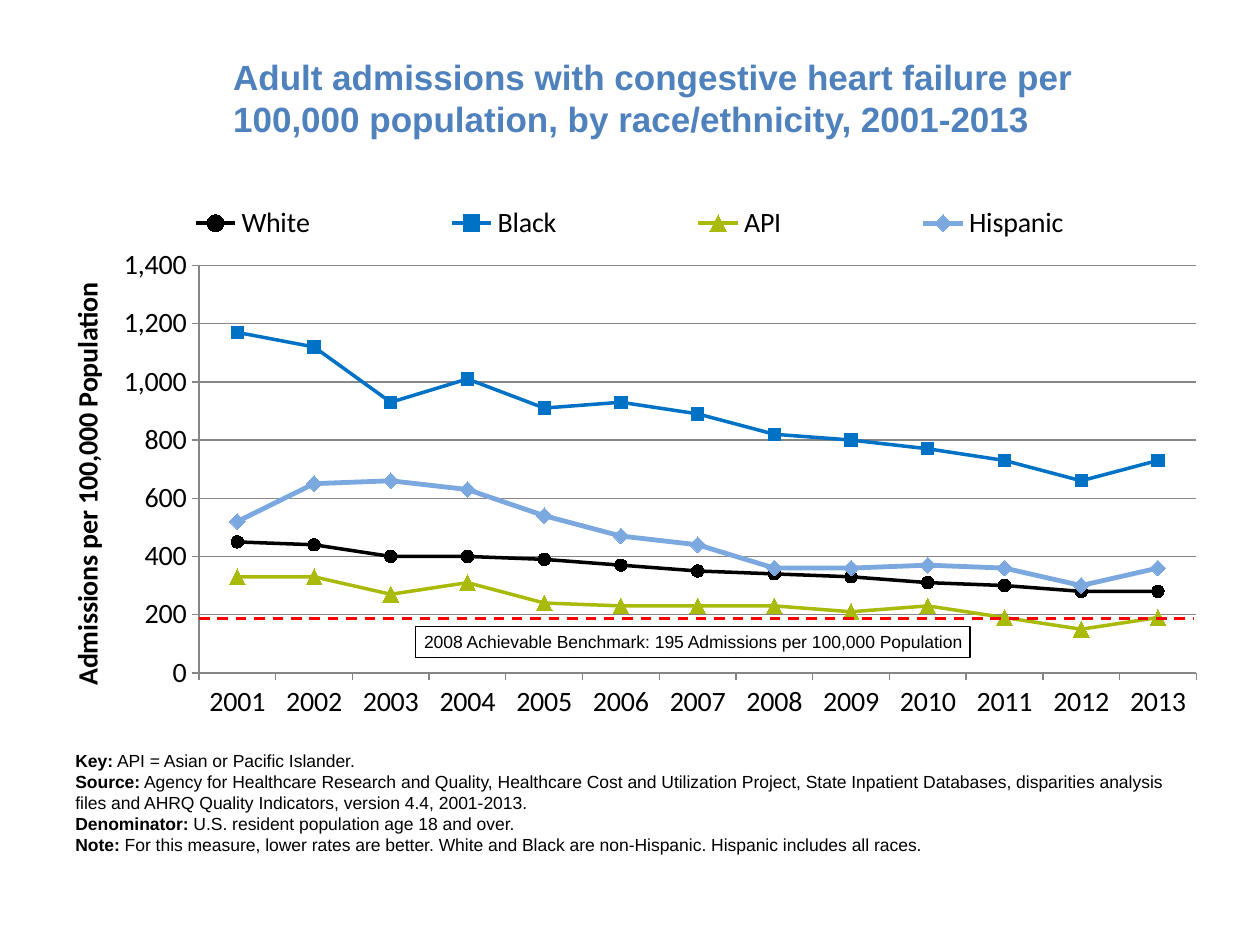
from lxml import etree
from pptx import Presentation
from pptx.chart.data import CategoryChartData
from pptx.dml.color import RGBColor
from pptx.enum.chart import (XL_CHART_TYPE as ChartType, XL_LEGEND_POSITION as LegendPosition,
                             XL_MARKER_STYLE as Marker, XL_TICK_MARK as Tick)
from pptx.enum.dml import MSO_LINE as Dash
from pptx.enum.shapes import MSO_CONNECTOR as Connector, MSO_SHAPE as Shape
from pptx.enum.text import MSO_ANCHOR as Anchor, PP_ALIGN as Align
from pptx.oxml import parse_xml
from pptx.oxml.ns import nsdecls, qn
from pptx.util import Inches, Pt

COLORS = {"title": "4F81BD", "text": "000000", "grid": "868686", "benchmark": "FF0000",
          "White": "000000", "Black": "0072C6", "API": "AABA0A", "Hispanic": "7BA8DF"}

YEARS = [str(year) for year in range(2001, 2014)]
# name, line width, marker, marker size, values
SERIES = [
    ("White", 2, Marker.CIRCLE, 7,
     (450, 440, 400, 400, 390, 370, 350, 340, 330, 310, 300, 280, 280)),
    ("Black", 2, Marker.SQUARE, 7,
     (1170, 1120, 930, 1010, 910, 930, 890, 820, 800, 770, 730, 660, 730)),
    ("API", 2, Marker.TRIANGLE, 9,
     (330, 330, 270, 310, 240, 230, 230, 230, 210, 230, 190, 150, 190)),
    ("Hispanic", 2.75, Marker.DIAMOND, 9,
     (520, 650, 660, 630, 540, 470, 440, 360, 360, 370, 360, 300, 360)),
]
NOTES = [
    ("Key:", " API = Asian or Pacific Islander."),
    ("Source:", " Agency for Healthcare Research and Quality, Healthcare Cost and Utilization "
     "Project, State Inpatient Databases, disparities analysis files and AHRQ Quality "
     "Indicators, version 4.4, 2001-2013."),
    ("Denominator:", " U.S. resident population age 18 and over."),
    ("Note:", " For this measure, lower rates are better. White and Black are non-Hispanic. "
     "Hispanic includes all races."),
]


def rgb(name):
    return RGBColor.from_string(COLORS[name])


def manual_layout(x, y, width, height, inner=False):
    target = '<c:layoutTarget val="inner"/>' if inner else ""
    return parse_xml(
        f'<c:layout {nsdecls("c")}><c:manualLayout>{target}'
        '<c:xMode val="edge"/><c:yMode val="edge"/>'
        f'<c:x val="{x}"/><c:y val="{y}"/><c:w val="{width}"/><c:h val="{height}"/>'
        '</c:manualLayout></c:layout>')


class SlideWriter:
    text_font = "Arial"
    chart_font = "Calibri"

    def __init__(self, page):
        self.page = page

    def style(self, font, size, color="text", bold=False, name=None):
        font.name = name or self.text_font
        font.size = Pt(size)
        font.bold = bold
        font.color.rgb = rgb(color)

    def span(self, para, text, size, color="text", bold=False):
        span = para.add_run()
        span.text = text
        self.style(span.font, size, color, bold)

    def title(self, text, *place):
        box = self.page.shapes.title
        box.left, box.top, box.width, box.height = map(Inches, place)
        box.text_frame.vertical_anchor = Anchor.MIDDLE
        para = box.text_frame.paragraphs[0]
        para.alignment = Align.LEFT
        self.span(para, text, 20, "title", bold=True)

    def notes(self, entries, *place):
        frame = self.page.shapes.add_textbox(*map(Inches, place)).text_frame
        frame.word_wrap = True
        for index, (label, text) in enumerate(entries):
            para = frame.add_paragraph() if index else frame.paragraphs[0]
            self.span(para, label, 10, bold=True)
            self.span(para, text, 10)

    def label(self, text, *place):
        box = self.page.shapes.add_shape(Shape.RECTANGLE, *map(Inches, place))
        box.shadow.inherit = False
        box.fill.background()
        box.line.color.rgb = rgb("text")
        box.line.width = Pt(0.75)
        frame = box.text_frame
        frame.word_wrap = False
        frame.vertical_anchor = Anchor.MIDDLE
        para = frame.paragraphs[0]
        para.alignment = Align.CENTER
        self.span(para, text, 10)

    def dashed_line(self, *ends):
        line = self.page.shapes.add_connector(Connector.STRAIGHT, *map(Inches, ends))
        line.line.color.rgb = rgb("benchmark")
        line.line.width = Pt(1.5)
        line.line.dash_style = Dash.DASH
        etree.SubElement(line._element.spPr, qn("a:effectLst"))

    def line_chart(self, categories, series, axis_title, *place):
        data = CategoryChartData(number_format="#,##0")
        data.categories = categories
        for name, *_, values in series:
            data.add_series(name, values)
        chart = self.page.shapes.add_chart(
            ChartType.LINE_MARKERS, *map(Inches, place), data).chart
        self.style(chart.font, 10)
        chart.has_title = False
        chart.plots[0].vary_by_categories = False

        # Series
        for drawn, (name, width, marker, size, _) in zip(chart.plots[0].series, series):
            drawn.smooth = False
            drawn.format.line.color.rgb = rgb(name)
            drawn.format.line.width = Pt(width)
            drawn.marker.style = marker
            drawn.marker.size = size
            drawn.marker.format.fill.solid()
            drawn.marker.format.fill.fore_color.rgb = rgb(name)
            drawn.marker.format.line.color.rgb = rgb(name)

        # Axes
        for axis in (chart.category_axis, chart.value_axis):
            axis.major_tick_mark = Tick.OUTSIDE
            axis.minor_tick_mark = Tick.NONE
            axis.format.line.color.rgb = rgb("grid")
            self.style(axis.tick_labels.font, 16, name=self.chart_font)
        axis = chart.value_axis
        axis.minimum_scale, axis.maximum_scale, axis.major_unit = 0, 1400, 200
        axis.tick_labels.number_format = "#,##0"
        axis.tick_labels.number_format_is_linked = False
        axis.major_gridlines.format.line.color.rgb = rgb("grid")
        span = axis.axis_title.text_frame.paragraphs[0].add_run()
        span.text = axis_title
        self.style(span.font, 16, bold=True, name=self.chart_font)

        # Legend and plot area
        chart.has_legend = True
        legend = chart.legend
        legend.position = LegendPosition.TOP
        legend.include_in_layout = False
        self.style(legend.font, 16, name=self.chart_font)
        for old in legend._element.findall(qn("c:layout")):
            legend._element.remove(old)
        legend._element.find(qn("c:legendPos")).addnext(manual_layout(0, 0, 1, 0.08))
        plot_area = chart._chartSpace.chart.plotArea
        for old in plot_area.findall(qn("c:layout")):
            plot_area.remove(old)
        plot_area.insert(0, manual_layout(0.12, 0.118, 0.88, 0.752, inner=True))


def main():
    deck = Presentation()
    deck.slide_width, deck.slide_height = Inches(10), Inches(7.5)
    writer = SlideWriter(deck.slides.add_slide(deck.slide_layouts[5]))

    writer.title("Adult admissions with congestive heart failure per 100,000 population, "
                 "by race/ethnicity, 2001-2013", 1.75, 0.3, 7.75, 0.95)
    writer.line_chart(YEARS, SERIES, "Admissions per 100,000 Population", 0.5, 1.6, 9, 4.3)
    writer.notes(NOTES, 0.5, 5.9, 9, 0.94)

    # Benchmark
    writer.dashed_line(1.58, 4.91, 9.48, 4.91)
    writer.label("2008 Achievable Benchmark: 195 Admissions per 100,000 Population",
                 3.3, 4.97, 4.4, 0.25)

    deck.save("out.pptx")


if __name__ == "__main__":
    main()
